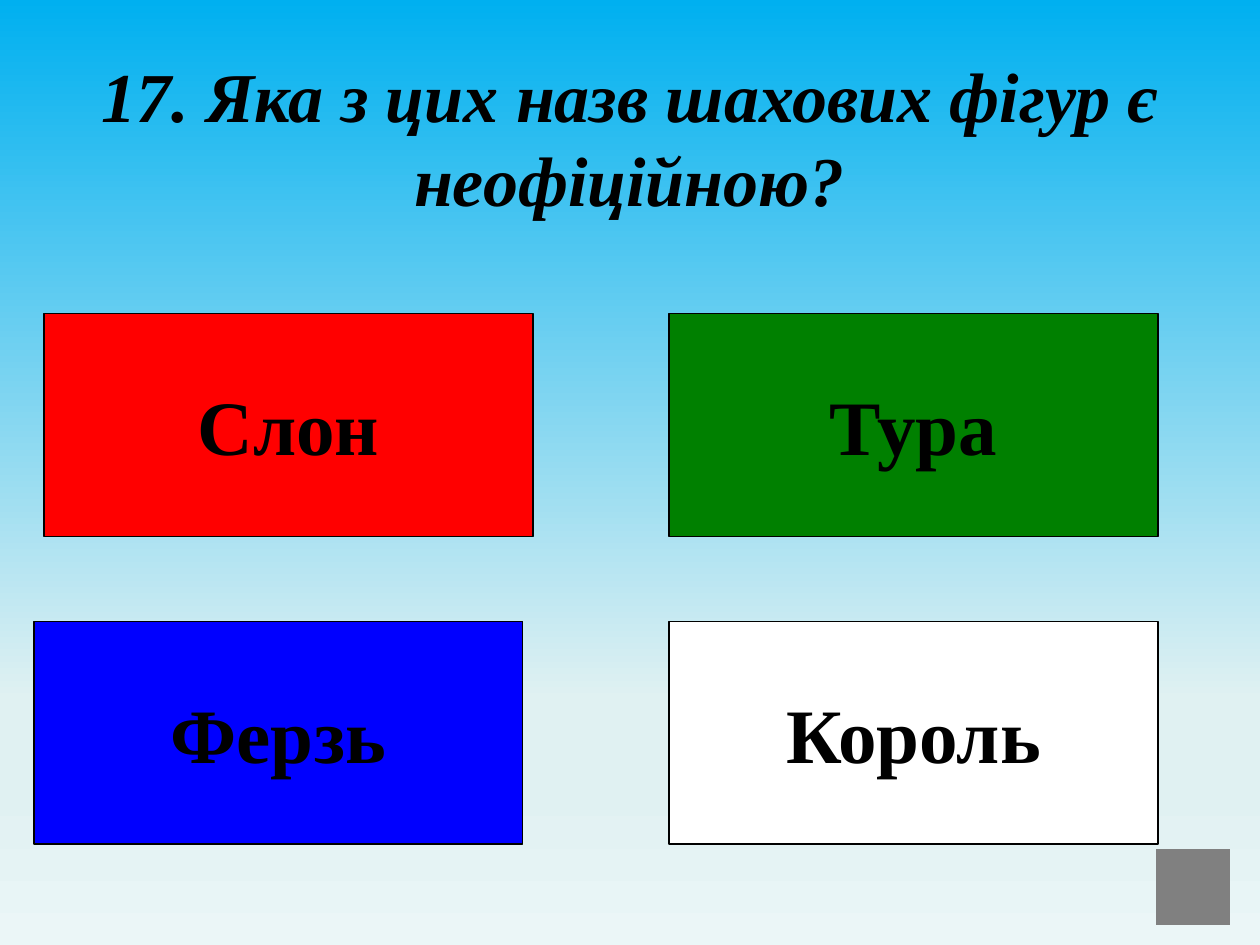
from copy import deepcopy
from dataclasses import dataclass

from pptx import Presentation
from pptx.dml.color import RGBColor
from pptx.enum.shapes import MSO_SHAPE
from pptx.enum.text import MSO_ANCHOR, PP_ALIGN
from pptx.oxml.ns import qn
from pptx.slide import Slide
from pptx.text.text import TextFrame
from pptx.util import Pt

RECTANGLE = MSO_SHAPE.RECTANGLE
BLANK_BUTTON = MSO_SHAPE.ACTION_BUTTON_CUSTOM
MIDDLE = MSO_ANCHOR.MIDDLE
CENTER = PP_ALIGN.CENTER
TITLE_ONLY = 5


@dataclass(frozen=True)
class Theme:
    font: str = "Times New Roman"
    title_size: float = 40
    answer_size: float = 44
    line_width: float = 0.75
    ink: str = "000000"
    button: str = "808080"
    sky: tuple[tuple[float, str], ...] = (
        (0, "00B0F0"),
        (0.74, "E0F1F2"),
        (0.83, "E0F1F2"),
        (1, "EBF6F7"),
    )


@dataclass(frozen=True)
class Answer:
    text: str
    left: float
    top: float
    color: str


THEME = Theme()
ANSWER_WIDTH, ANSWER_HEIGHT = 279.4, 127.4
RIGHT_COLUMN = 382.3
TOP_ROW, BOTTOM_ROW = 179.3, 355
ANSWERS = (
    Answer("Слон", 25.2, TOP_ROW, "FF0000"),
    Answer("Тура", RIGHT_COLUMN, TOP_ROW, "008000"),
    Answer("Ферзь", 19.4, BOTTOM_ROW, "0000FF"),
    Answer("Король", RIGHT_COLUMN, BOTTOM_ROW, "FFFFFF"),
)


def paint_background(slide: Slide) -> None:
    fill = slide.background.fill
    fill.gradient()
    fill.gradient_angle = 270
    stop_list = slide.element.find(".//" + qn("a:gsLst"))
    while len(stop_list) < len(THEME.sky):
        stop_list.append(deepcopy(stop_list[0]))
    for stop, (position, color) in zip(fill.gradient_stops, THEME.sky):
        stop.position = position
        stop.color.rgb = RGBColor.from_string(color)


def write_text(frame: TextFrame, text: str, size: float, italic: bool, wrap: bool) -> None:
    frame.text = text
    frame.word_wrap = wrap
    frame.vertical_anchor = MIDDLE
    para = frame.paragraphs[0]
    para.alignment = CENTER
    para.font.name = THEME.font
    para.font.size = Pt(size)
    para.font.bold = True
    para.font.italic = italic
    para.font.color.rgb = RGBColor.from_string(THEME.ink)


def add_title(slide: Slide, text: str) -> None:
    title = slide.shapes.title
    title.left, title.top = Pt(36), Pt(21.6)
    title.width, title.height = Pt(647.3), Pt(112.3)
    write_text(title.text_frame, text, THEME.title_size, italic=True, wrap=True)


def add_answer(slide: Slide, answer: Answer) -> None:
    box = slide.shapes.add_shape(
        RECTANGLE, Pt(answer.left), Pt(answer.top), Pt(ANSWER_WIDTH), Pt(ANSWER_HEIGHT)
    )
    box.shadow.inherit = False
    box.fill.solid()
    box.fill.fore_color.rgb = RGBColor.from_string(answer.color)
    box.line.color.rgb = RGBColor.from_string(THEME.ink)
    box.line.width = Pt(THEME.line_width)
    write_text(box.text_frame, answer.text, THEME.answer_size, italic=False, wrap=False)


def add_button(slide: Slide) -> None:
    button = slide.shapes.add_shape(BLANK_BUTTON, Pt(660.3), Pt(485.3), Pt(42.5), Pt(43.2))
    button.shadow.inherit = False
    button.fill.solid()
    button.fill.fore_color.rgb = RGBColor.from_string(THEME.button)
    button.line.fill.background()


def main() -> None:
    deck = Presentation()
    deck.slide_width, deck.slide_height = Pt(720), Pt(540)
    slide = deck.slides.add_slide(deck.slide_layouts[TITLE_ONLY])
    paint_background(slide)
    add_title(slide, "17. Яка з цих назв шахових фігур є неофіційною?")
    for answer in ANSWERS:
        add_answer(slide, answer)
    add_button(slide)
    deck.save("out.pptx")


if __name__ == "__main__":
    main()
